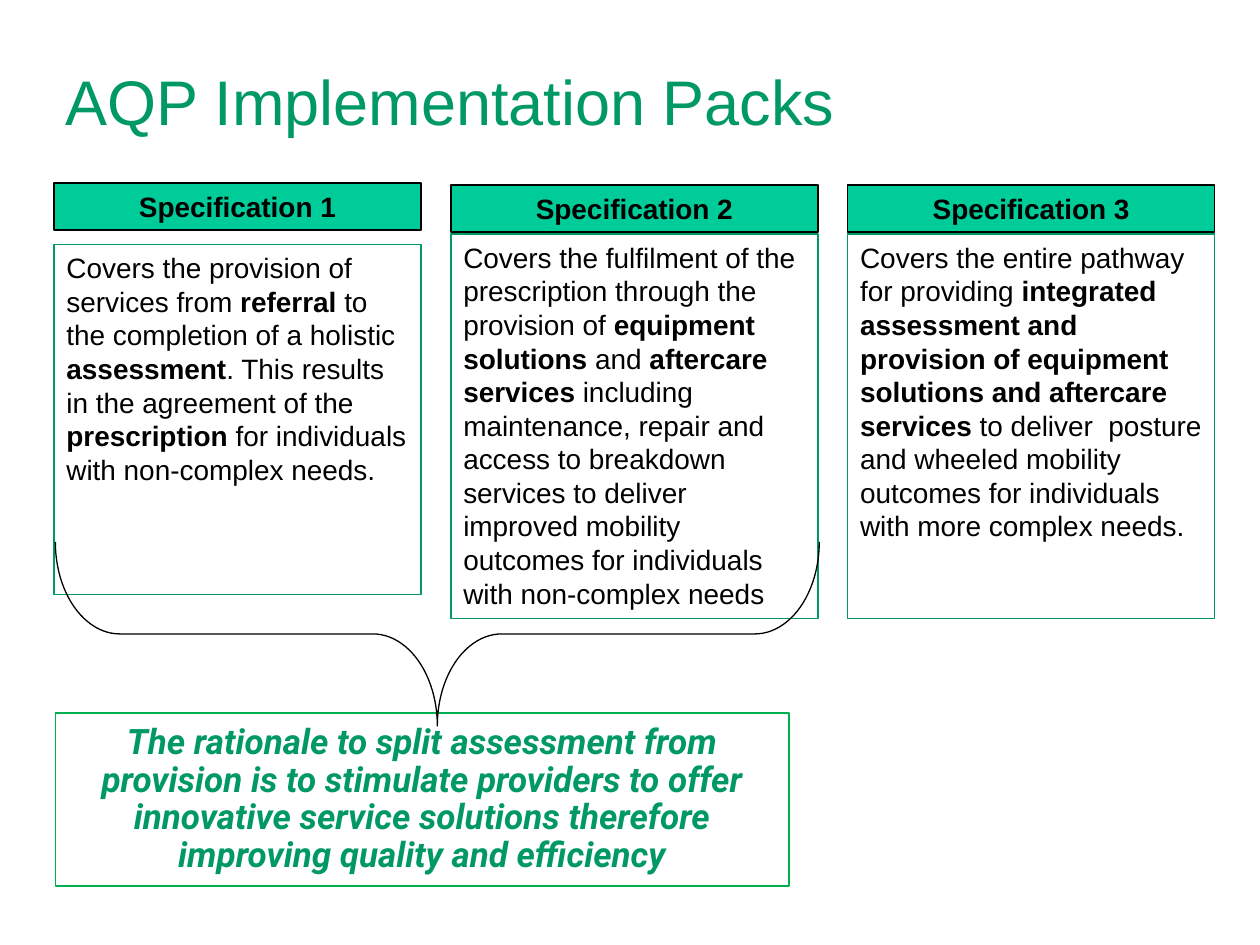
from pptx import Presentation
from pptx.dml.color import RGBColor
from pptx.enum.shapes import MSO_SHAPE as Shape
from pptx.enum.text import MSO_ANCHOR as Anchor, PP_ALIGN as Align
from pptx.util import Cm, Pt

TITLE = "AQP Implementation Packs"
RATIONALE = (
    "The rationale to split assessment from provision is to stimulate providers "
    "to offer innovative service solutions therefore improving quality and efficiency"
)
SPECIFICATIONS = [
    {"name": "Specification 1", "header_top": 3.69, "body_top": 4.93, "body_height": 7.06,
     "text": [("Covers the provision of services from ", False),
              ("referral", True),
              (" to the completion of a holistic ", False),
              ("assessment", True),
              (". This results in the agreement of the ", False),
              ("prescription", True),
              (" for individuals with non-complex needs.", False)]},
    {"name": "Specification 2", "header_top": 3.73, "body_top": 4.72, "body_height": 7.75,
     "text": [("Covers the fulfilment of the prescription through the provision of ", False),
              ("equipment solutions", True),
              (" and ", False),
              ("aftercare services", True),
              (" including maintenance, repair and access to breakdown services to deliver "
               "improved mobility outcomes for individuals with non-complex needs", False)]},
    {"name": "Specification 3", "header_top": 3.73, "body_top": 4.72, "body_height": 7.75,
     "text": [("Covers the entire pathway for providing ", False),
              ("integrated assessment and provision of equipment solutions "
               "and aftercare services ", True),
              ("to deliver  posture and wheeled mobility outcomes for individuals "
               "with more complex needs.", False)]},
]
GREEN, MINT, BORDER, BLACK, WHITE = "009966", "00CC99", "00B050", "000000", "FFFFFF"
COLUMN_LEFT, COLUMN_PITCH, COLUMN_WIDTH, HEADER_HEIGHT = 1.09, 8, 7.4, 0.95


def color(value):
    return RGBColor.from_string(value)


def add_outline(page, kind, bounds, line, fill=None, weight=0.75):
    shape = page.shapes.add_shape(kind, *map(Cm, bounds))
    shape.shadow.inherit = False
    shape.line.color.rgb = color(line)
    shape.line.width = Pt(weight)
    if fill:
        shape.fill.solid()
        shape.fill.fore_color.rgb = color(fill)
    else:
        shape.fill.background()
    return shape


def write(shape, spans, size, ink=BLACK, font="Arial", align=Align.LEFT,
          anchor=Anchor.MIDDLE, italic=False):
    frame = shape.text_frame
    frame.word_wrap = True
    frame.vertical_anchor = anchor
    para = frame.paragraphs[0]
    para.alignment = align
    for text, bold in spans:
        span = para.add_run()
        span.text = text
        span.font.name = font
        span.font.size = Pt(size)
        span.font.bold = bold
        span.font.italic = italic
        span.font.color.rgb = color(ink)
    return frame


def add_title(page):
    title = page.shapes.title
    title.left, title.top, title.width, title.height = map(Cm, (1.07, 0.43, 20.24, 3.18))
    write(title, [(TITLE, False)], 36, GREEN)


def add_rationale(page):
    box = add_outline(page, Shape.RECTANGLE, (1.12, 14.38, 14.78, 3.48), BORDER, WHITE, 1)
    frame = write(box, [(RATIONALE, True)], 20, GREEN, "Roboto", Align.CENTER, italic=True)
    frame.margin_left = frame.margin_right = Cm(0.38)
    frame.margin_top = frame.margin_bottom = Cm(0.25)
    frame.paragraphs[0].line_spacing = 0.9


def add_specifications(page):
    for index, item in enumerate(SPECIFICATIONS):
        left = COLUMN_LEFT + index * COLUMN_PITCH
        header = add_outline(page, Shape.RECTANGLE,
                             (left, item["header_top"], COLUMN_WIDTH, HEADER_HEIGHT), BLACK, MINT)
        write(header, [(item["name"], True)], 16, align=Align.CENTER)
        body = add_outline(page, Shape.RECTANGLE,
                           (left, item["body_top"], COLUMN_WIDTH, item["body_height"]), GREEN)
        write(body, item["text"], 16, anchor=Anchor.TOP)


def add_brace(page):
    brace = add_outline(page, Shape.RIGHT_BRACE, (6.96, 5.08, 3.71, 15.4), BLACK)
    brace.rotation = 90
    brace.adjustments[0] = 0.35
    brace.adjustments[1] = 0.5


def main():
    deck = Presentation()
    deck.slide_width, deck.slide_height = Cm(25.4), Cm(19.05)
    page = deck.slides.add_slide(deck.slide_layouts[5])
    add_title(page)
    add_rationale(page)
    add_specifications(page)
    add_brace(page)
    deck.save("out.pptx")


if __name__ == "__main__":
    main()
